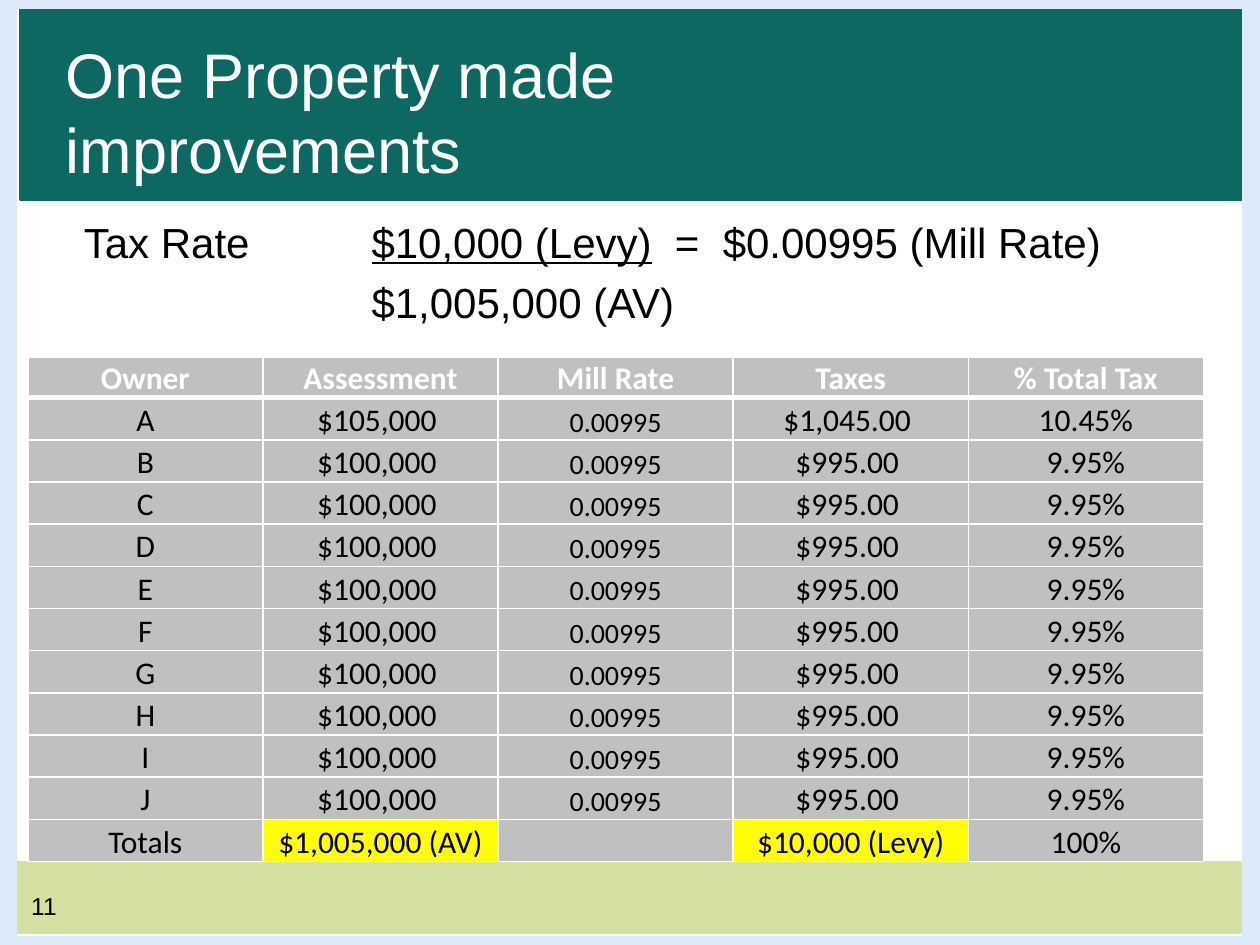
"""Build the slide on tax shares after one property is improved."""
from lxml import etree
from pptx import Presentation, dml, util as u
from pptx.dml.color import RGBColor
from pptx.enum import shapes, text
from pptx.oxml import ns

TITLE = "One Property made improvements"
PAGE = "11"
RATE = [
    [(" Tax Rate\t", False), ("$10,000 (Levy)", True),
     ("  =  $0.00995 (Mill Rate)", False)],
    [("\t$1,005,000 (AV)", False)],
]
HEAD = ["Owner", "Assessment", "Mill Rate", "Taxes", "% Total Tax"]
FIRST = ["A", "$105,000 ", "0.00995", "$1,045.00 ", "10.45%"]
REST = ["$100,000 ", "0.00995", "$995.00 ", "9.95%"]
TOTAL = ["Totals", "$1,005,000 (AV)", "", "$10,000 (Levy)", "100%"]
ROWS = [HEAD, FIRST] + [[name] + REST for name in "BCDEFGHIJ"] + [TOTAL]

LIME, TEAL, PALE = "D5E1A3", "0D6861", "DDEAF9"
BANDS = [
    (LIME, 0.3, 17.4, 24.71, 1.4),
    (TEAL, 0.41, 0.2, 24.64, 3.81),
    (PALE, 0, 0, 25.4, 0.15),
    (PALE, 0.01, 0.14, 0.3, 18.82),
    (PALE, 25.08, 0.14, 0.3, 18.82),
    (PALE, 0, 18.9, 25.4, 0.15),
]
COL, TOP, ROW = 4.74, 0.64, 0.85


def paint(fmt, hue):
    fmt.solid()
    fmt.fore_color.rgb = RGBColor.from_string(hue)


def add_run(para, words, size, hue="000000", face="Arial", bold=False, line=False):
    run = para.add_run()
    run.text = words
    font = run.font
    font.size, font.name, font.bold = u.Pt(size), face, bold
    if line:
        font.underline = True
    paint(font.fill, hue)
    return run


def add_band(slide, hue, *box):
    band = slide.shapes.add_shape(
        shapes.MSO_SHAPE.RECTANGLE, *[u.Cm(n) for n in box])
    band.shadow.inherit = False
    paint(band.fill, hue)
    paint(band.line.fill, hue)
    band.line.width = u.Pt(2)


def add_box(slide, *box):
    frame = slide.shapes.add_textbox(*[u.Cm(n) for n in box]).text_frame
    frame.word_wrap = True
    return frame


def set_title(slide):
    title = slide.shapes.title
    slide.shapes._spTree.append(title._element)
    title.left, title.top = u.Cm(1.07), u.Cm(0.64)
    title.width, title.height = u.Cm(18.85), u.Cm(3.18)
    frame = title.text_frame
    frame.vertical_anchor = text.MSO_ANCHOR.MIDDLE
    para = frame.paragraphs[0]
    para.alignment = text.PP_ALIGN.LEFT
    run = add_run(para, TITLE, 36, "FFFFFF")
    glow = etree.fromstring(
        f'<a:effectLst {ns.nsdecls("a")}><a:outerShdw blurRad="38100" '
        'dist="38100" dir="2700000"><a:srgbClr val="000000">'
        '<a:alpha val="43000"/></a:srgbClr></a:outerShdw></a:effectLst>')
    run._r.rPr.find(ns.qn("a:solidFill")).addnext(glow)


def add_rate(slide):
    frame = add_box(slide, 1.22, 4.24, 22.86, 12.9)
    for i, parts in enumerate(RATE):
        para = frame.add_paragraph() if i else frame.paragraphs[0]
        if i:
            para.space_before = u.Pt(5.5)
        tabs = etree.SubElement(para._p.get_or_add_pPr(), ns.qn("a:tabLst"))
        etree.SubElement(tabs, ns.qn("a:tab"), pos=str(u.Cm(6.02)), algn="l")
        for words, line in parts:
            add_run(para, words, 24, line=line)


def set_edges(cell, head, under):
    props = cell._tc.get_or_add_tcPr()
    wide = {"L": 1, "R": 1, "T": 3 if under else 1, "B": 3 if head else 1}
    for i, (side, size) in enumerate(wide.items()):
        props.insert(i, etree.fromstring(
            f'<a:ln{side} {ns.nsdecls("a")} w="{u.Pt(size)}"><a:solidFill>'
            f'<a:srgbClr val="FFFFFF"/></a:solidFill></a:ln{side}>'))


def fill_cell(cell, words, r, c):
    head, total = r == 0, r == len(ROWS) - 1
    cell.margin_left = cell.margin_right = cell.margin_top = u.Cm(0.03)
    cell.margin_bottom = 0
    cell.vertical_anchor = (
        text.MSO_ANCHOR.MIDDLE if head else text.MSO_ANCHOR.BOTTOM)
    paint(cell.fill, "FFFF00" if total and c in (1, 3) else "C0C0C0")
    set_edges(cell, head, r == 1)
    para = cell.text_frame.paragraphs[0]
    para.alignment = text.PP_ALIGN.CENTER
    if words:
        add_run(para, words, 16 if c == 2 and not head else 18,
                "FFFFFF" if head else "000000", "Calibri", head)


def add_grid(slide):
    rows, cols = len(ROWS), len(HEAD)
    grid = slide.shapes.add_table(
        rows, cols, u.Cm(0.56), u.Cm(7.21),
        u.Cm(COL * cols), u.Cm(TOP + ROW * (rows - 1))).table
    for col in grid.columns:
        col.width = u.Cm(COL)
    for r, row in enumerate(ROWS):
        grid.rows[r].height = u.Cm(ROW if r else TOP)
        for c, words in enumerate(row):
            fill_cell(grid.cell(r, c), words, r, c)


def main():
    deck = Presentation()
    deck.slide_width, deck.slide_height = u.Cm(25.4), u.Cm(19.05)
    slide = deck.slides.add_slide(deck.slide_layouts[5])
    paint(slide.background.fill, "FFFFFF")
    for band in BANDS:
        add_band(slide, *band)
    add_run(add_box(slide, 0.38, 17.83, 5.92, 1.02).paragraphs[0], PAGE, 14)
    add_rate(slide)
    set_title(slide)
    add_grid(slide)
    deck.save("out.pptx")


if __name__ == "__main__":
    main()
